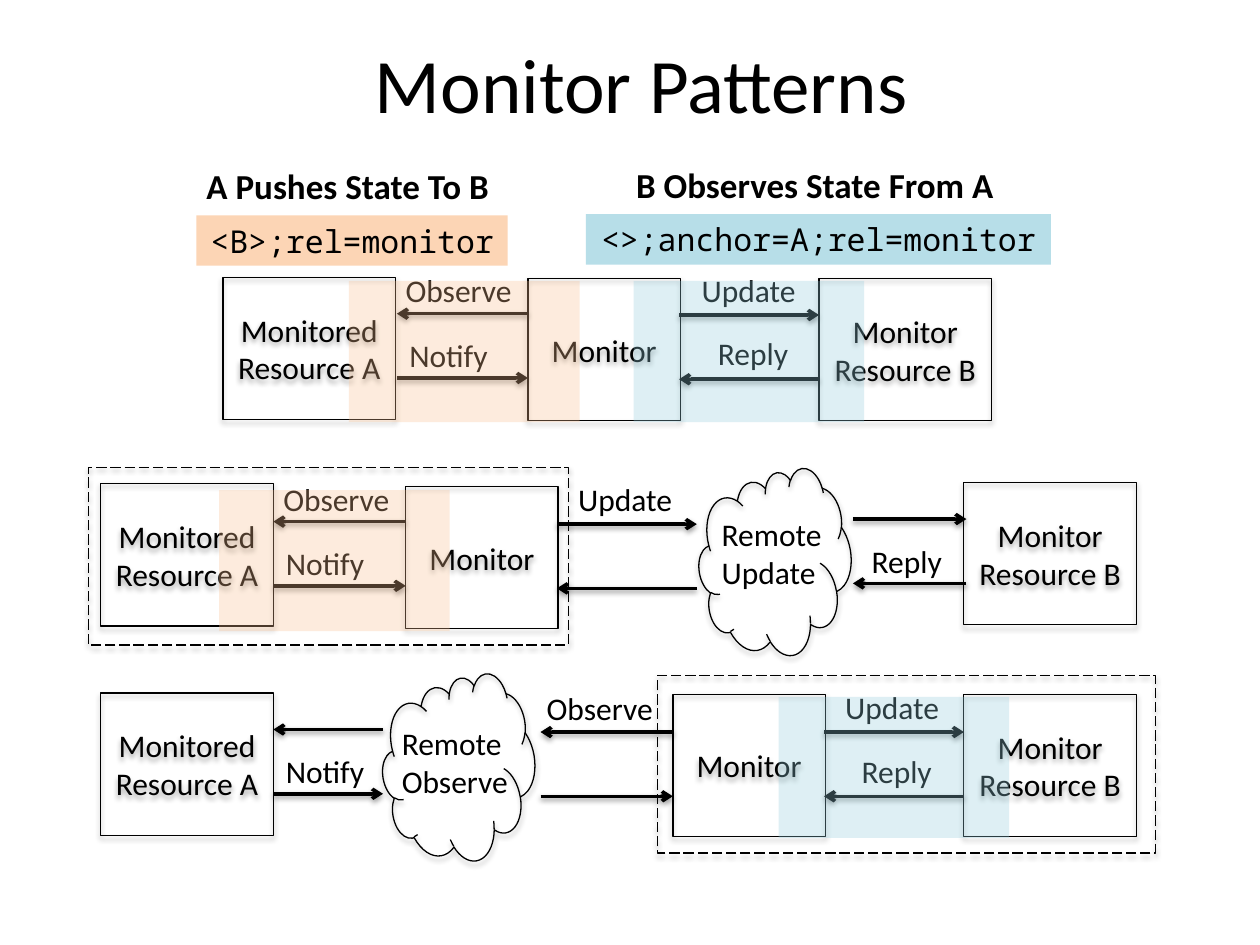
from pptx import Presentation
from pptx.dml.color import RGBColor
from pptx.enum.dml import MSO_LINE_DASH_STYLE as Dash
from pptx.enum.shapes import MSO_CONNECTOR, MSO_SHAPE as Preset
from pptx.enum.text import MSO_ANCHOR as Anchor, MSO_AUTO_SIZE as AutoSize, PP_ALIGN as Align
from pptx.oxml.ns import qn
from pptx.util import Inches, Pt
from lxml.etree import SubElement

THEME = {
    "font": "Calibri", "code_font": "Noto Sans Mono", "ink": "000000",
    "title": 44, "heading": 20, "body": 18, "outline": 0.75, "arrow": 2,
    "push": "FCD5B5", "observe": "B7DEE8",
    "push_tint": "FAC090", "observe_tint": "93CDDD",
}

TITLE = "Monitor Patterns"
HEADINGS = [  # text, left, top, width
    ("A Pushes State To B", 1.54, 1.26, 2.51),
    ("B Observes State From A", 4.95, 1.25, 3.08),
]
LINK_TAGS = [  # text, left, top, width, fill
    ("<>;anchor=A;rel=monitor", 4.65, 1.7, 3.69, "observe"),
    ("<B>;rel=monitor", 1.56, 1.71, 2.47, "push"),
]
# Node kind: lines, width
NODES = {
    "source": (["Monitored", "Resource A"], 1.37),
    "monitor": (["Monitor"], 1.21),
    "target": (["Monitor Resource B"], 1.37),
}
NODE_HEIGHT = 1.13
PLACED_NODES = [  # kind, left, top
    ("source", 1.77, 2.2), ("monitor", 4.19, 2.21), ("target", 6.5, 2.21),
    ("source", 0.8, 3.84), ("monitor", 3.22, 3.86), ("target", 7.65, 3.83),
    ("source", 0.8, 5.5), ("monitor", 5.34, 5.51), ("target", 7.65, 5.51),
]
# Each exchange is two opposite arrows: left, right, y of the upper one, its direction
ARROW_GAP = 0.51
EXCHANGES = [
    (3.15, 4.19, 2.49, "left"), (5.39, 6.5, 2.5, "right"),
    (2.17, 3.22, 4.14, "left"), (4.42, 5.53, 4.16, "right"), (6.77, 7.67, 4.12, "right"),
    (2.17, 3.04, 5.79, "left"), (4.29, 5.34, 5.81, "left"), (6.54, 7.65, 5.81, "right"),
]
LABEL_WIDTHS = {"Observe": 1.05, "Notify": 0.86, "Update": 0.96, "Reply": 0.77}
LABELS = [  # text, left, top
    ("Observe", 3.12, 2.1), ("Notify", 3.15, 2.62), ("Update", 5.47, 2.1), ("Reply", 5.6, 2.6),
    ("Observe", 2.15, 3.76), ("Notify", 2.17, 4.27), ("Update", 4.49, 3.76), ("Reply", 6.82, 4.25),
    ("Notify", 2.17, 5.92), ("Observe", 4.24, 5.42), ("Update", 6.61, 5.41), ("Reply", 6.74, 5.92),
]
CLOUDS = [(5.55, 3.76), (3.04, 5.39)]
CLOUD_LABELS = [  # text, left, top, width
    ("Remote Update", 5.63, 4.04, 1.06), ("Remote Observe", 3.09, 5.7, 1.41),
]
FRAMES = [(0.7, 3.71, 3.81), (5.22, 5.36, 3.95)]  # left, top, width
TINTS = [  # left, top, fill
    (2.77, 2.23, "push_tint"), (5.03, 2.23, "observe_tint"),
    (1.74, 3.89, "push_tint"), (6.18, 5.53, "observe_tint"),
]


def color(name):
    return RGBColor.from_string(THEME[name])


def write(frame, lines, size="body", font="font", align=None, bold=None):
    para = frame.paragraphs[0]
    para.alignment = align
    for index, line in enumerate(lines):
        if index:
            para.add_line_break()
        span = para.add_run()
        span.text = line
        span.font.name = THEME[font]
        span.font.size = Pt(THEME[size])
        span.font.bold = bold
        span.font.color.rgb = color("ink")


def cast_shadow(shape, distance, opacity):
    """Give the shape a soft shadow straight below it."""
    properties = shape._element.spPr
    effects = properties.find(qn("a:effectLst"))
    if effects is None:
        effects = SubElement(properties, qn("a:effectLst"))
    shadow = SubElement(effects, qn("a:outerShdw"), blurRad=str(Pt(3.1)),
                        dist=str(Pt(distance)), dir="5400000", rotWithShape="0")
    black = SubElement(shadow, qn("a:srgbClr"), val=THEME["ink"])
    SubElement(black, qn("a:alpha"), val=str(opacity * 1000))


def add_filled(page, left, top, width, height, fill, opacity=100):
    box = page.shapes.add_shape(Preset.RECTANGLE, *map(Inches, (left, top, width, height)))
    box.shadow.inherit = False
    box.line.fill.background()
    box.fill.solid()
    box.fill.fore_color.rgb = color(fill)
    if opacity < 100:
        tone = box._element.spPr.find(qn("a:solidFill"))[0]
        SubElement(tone, qn("a:alpha"), val=str(opacity * 1000))
    return box


def add_outlined(page, left, top, width, height, preset=Preset.RECTANGLE):
    box = page.shapes.add_shape(preset, *map(Inches, (left, top, width, height)))
    box.fill.background()
    box.line.color.rgb = color("ink")
    box.line.width = Pt(THEME["outline"])
    box.shadow.inherit = False
    cast_shadow(box, 1.8, 35)
    return box


def add_arrow(page, left, right, y, direction):
    arrow = page.shapes.add_connector(
        MSO_CONNECTOR.STRAIGHT, Inches(left), Inches(y), Inches(right), Inches(y))
    arrow.line.color.rgb = color("ink")
    arrow.line.width = Pt(THEME["arrow"])
    end = "a:headEnd" if direction == "left" else "a:tailEnd"
    SubElement(arrow.line._get_or_add_ln(), qn(end), type="arrow")
    cast_shadow(arrow, 1.6, 38)


def add_text(page, text, left, top, width, height=0.4, wrap=False, **style):
    box = page.shapes.add_textbox(*map(Inches, (left, top, width, height)))
    box.text_frame.word_wrap = wrap
    box.text_frame.auto_size = AutoSize.SHAPE_TO_FIT_TEXT
    write(box.text_frame, [text], **style)


def build():
    deck = Presentation()
    deck.slide_width, deck.slide_height = Inches(10), Inches(7.5)
    page = deck.slides.add_slide(deck.slide_layouts[5])

    title = page.shapes.title
    title.left, title.top, title.width, title.height = map(Inches, (0.59, 0.03, 9, 1.25))
    title.text_frame.vertical_anchor = Anchor.MIDDLE
    write(title.text_frame, [TITLE], size="title", align=Align.CENTER)

    for kind, left, top in PLACED_NODES:
        lines, width = NODES[kind]
        node = add_outlined(page, left, top, width, NODE_HEIGHT)
        node.text_frame.vertical_anchor = Anchor.MIDDLE
        write(node.text_frame, lines, align=Align.CENTER)

    for left, right, y, direction in EXCHANGES:
        opposite = "right" if direction == "left" else "left"
        add_arrow(page, left, right, y, direction)
        add_arrow(page, left, right, y + ARROW_GAP, opposite)

    for text, left, top in LABELS:
        add_text(page, text, left, top, LABEL_WIDTHS[text])

    for left, top in CLOUDS:
        cloud = add_outlined(page, left, top, 1.21, 1.45, Preset.CLOUD)
        cloud.rotation = 350.3

    for left, top, width in FRAMES:
        frame = add_outlined(page, left, top, width, 1.41)
        frame.line.dash_style = Dash.LONG_DASH

    for text, left, top, width, fill in LINK_TAGS:
        tag = add_filled(page, left, top, width, 0.4, fill)
        tag.text_frame.word_wrap = False
        tag.text_frame.auto_size = AutoSize.SHAPE_TO_FIT_TEXT
        tag.text_frame.vertical_anchor = Anchor.TOP
        write(tag.text_frame, [text], font="code_font", align=Align.CENTER)

    for left, top, fill in TINTS:
        add_filled(page, left, top, 1.83, 1.12, fill, opacity=30)

    for text, left, top, width in HEADINGS:
        add_text(page, text, left, top, width, 0.44, size="heading", bold=True)

    for text, left, top, width in CLOUD_LABELS:
        add_text(page, text, left, top, width, 0.71, wrap=True)

    deck.save("out.pptx")


if __name__ == "__main__":
    build()
